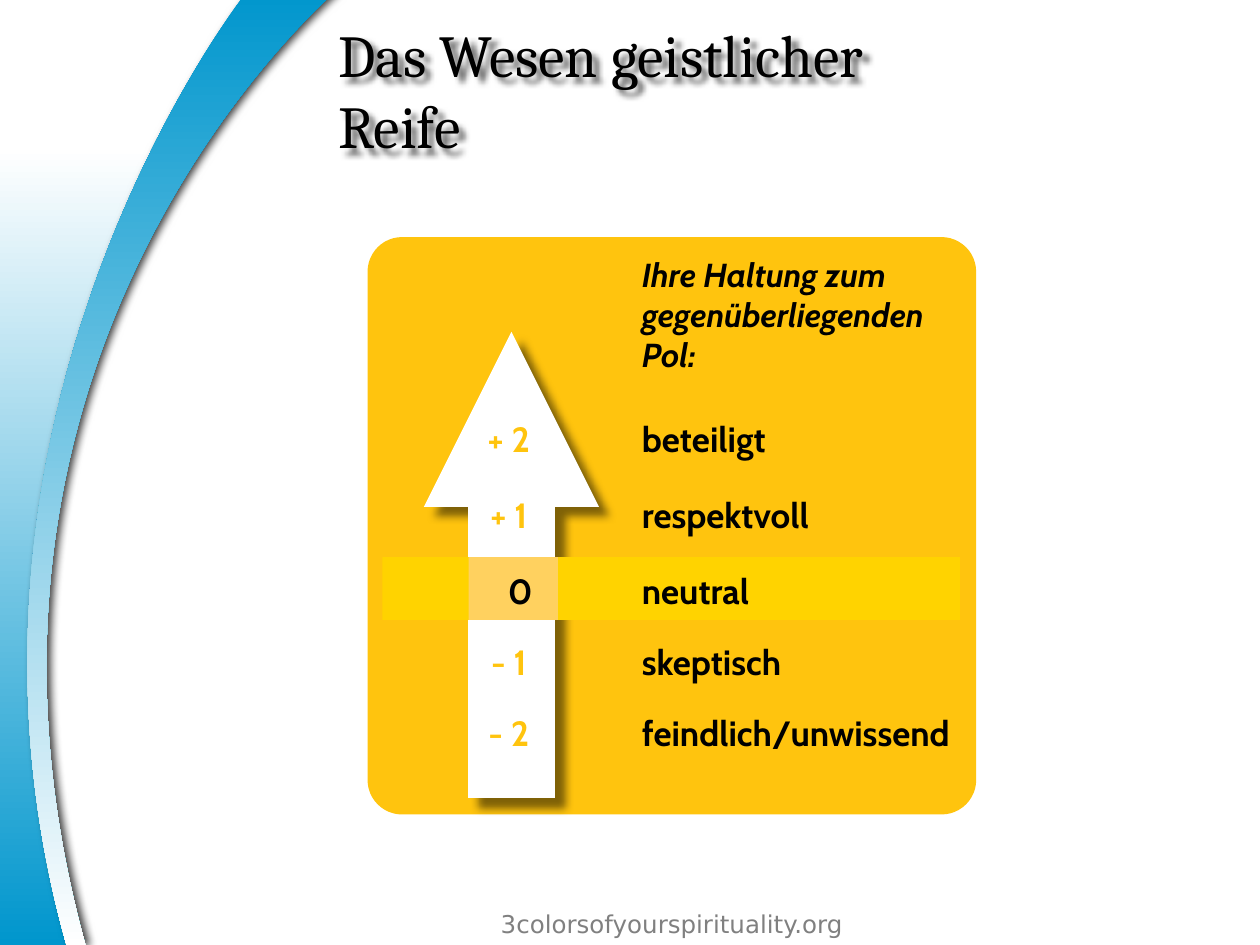
"""Build a slide on the nature of spiritual maturity."""
import lxml.etree
import pptx
import pptx.dml.color
import pptx.enum.shapes
import pptx.enum.text
import pptx.oxml.ns
import pptx.util

Cm, Pt = pptx.util.Cm, pptx.util.Pt
SHAPE = pptx.enum.shapes.MSO_SHAPE
ALIGN = pptx.enum.text.PP_ALIGN
FIT = pptx.enum.text.MSO_AUTO_SIZE
GOLD, BLUE, WHITE, BLACK = "FFC40E", "0096CD", "FFFFFF", "000000"
ROWS = [
    ("+ 2", "beteiligt", 3.52),
    ("+ 1", "respektvoll", 5.05),
    ("0", "neutral", 6.57),
    ("- 1", "skeptisch", 8),
    ("- 2", "feindlich/unwissend", 9.44),
]


def tint(code):
    """Turn a hex string into a colour."""
    return pptx.dml.color.RGBColor.from_string(code)


def name(tag):
    """Give the full name of a drawing element."""
    return pptx.oxml.ns.qn("a:" + tag)


def node(home, tag, **attrs):
    """Add a drawing element to its parent."""
    texts = {key: str(val) for key, val in attrs.items()}
    return lxml.etree.SubElement(home, name(tag), texts)


def shade(home, alpha, blur, dist, angle):
    """Add a black outer shadow, with blur and distance in points."""
    outer = node(node(home, "effectLst"), "outerShdw", blurRad=Pt(blur),
                 dist=Pt(dist), dir=angle * 60000, algn="ctr", rotWithShape=0)
    node(node(outer, "srgbClr", val=BLACK), "alpha", val=alpha * 1000)


def write(frame, text, size=20, face="Cabin", color=BLACK, bold=True,
          slant=False, align=ALIGN.LEFT, fit=FIT.SHAPE_TO_FIT_TEXT):
    """Fill a text frame and format its text."""
    frame.word_wrap, frame.auto_size = True, fit
    line = frame.paragraphs[0]
    line.text, line.alignment = text, align
    for run in line.runs:
        font = run.font
        font.size, font.name, font.bold, font.italic = Pt(size), face, bold, slant
        font.color.rgb = tint(color)


def label(slide, left, top, width, height, text, **style):
    """Add a text box, measured in centimetres."""
    box = slide.shapes.add_textbox(Cm(left), Cm(top), Cm(width), Cm(height))
    write(box.text_frame, text, **style)


def block(home, kind, left, top, width, height, color):
    """Add a plain filled shape, measured in centimetres."""
    shape = home.add_shape(kind, Cm(left), Cm(top), Cm(width), Cm(height))
    shape.shadow.inherit = False
    shape.fill.solid()
    shape.fill.fore_color.rgb = tint(color)
    shape.line.fill.background()
    return shape


def sweep(slide, left, top, start, parts, first, last):
    """Draw an outline of lines (one point) and curves (three points)."""
    spots = [(Cm(left + x), Cm(top + y)) for part in parts for x, y in part]
    pen = slide.shapes.build_freeform(Cm(left + start[0]), Cm(top + start[1]))
    pen.add_line_segments(spots, close=True)
    shape = pen.convert_to_shape()
    lines = iter(list(shape.element.iter(name("lnTo"))))
    for part in parts:
        group = [next(lines) for _ in part]
        if len(group) == 3:
            curve = lxml.etree.Element(name("cubicBezTo"))
            group[0].addprevious(curve)
            for line in group:
                curve.append(line[0])
                line.getparent().remove(line)
    shape.line.fill.background()
    shape.fill.gradient()
    shape.fill.gradient_angle = 270
    for stop, code in zip(shape.fill.gradient_stops, (first, last)):
        stop.color.rgb = tint(code)
    return shape


def side(slide, left, top):
    """Draw the curved edge on the left of the slide."""
    glow = [[(3.84, 2.97)],
            [(-0.89, 10.97), (1.27, 17.5), (1.65, 19.05)],
            [(0, 19.05)],
            [(-0.28, 16.36), (0, 2.97), (0, 2.97)]]
    pale = sweep(slide, left, top, (0, 2.97), glow, WHITE, BLUE)
    pale.shadow.inherit = False
    arc = [[(1.73, 19.08)],
           [(-1.63, 6.93), (6.78, -0.18), (6.78, -0.18)],
           [(5, -0.2)],
           [(5, -0.2), (-1.7, 8.28), (1.35, 19.08)]]
    band = sweep(slide, left, top, (1.35, 19.08), arc, BLUE, WHITE)
    shade(band.element.spPr, 75, 5, 3, 0)


def head(slide, left, top, width, height):
    """Place the title with its shadow."""
    title = slide.shapes.title
    title.left, title.top = Cm(left), Cm(top)
    title.width, title.height = Cm(width), Cm(height)
    title.fill.background()
    shade(title.element.spPr, 60, 3, 4, 45)
    frame = title.text_frame
    frame.vertical_anchor = pptx.enum.text.MSO_ANCHOR.MIDDLE
    write(frame, "Das Wesen geistlicher\vReife", size=34, face="Cambria",
          bold=False, fit=FIT.NONE)


def arrow(slide, x, low, high):
    """Draw the thick white arrow pointing up."""
    kind = pptx.enum.shapes.MSO_CONNECTOR.STRAIGHT
    line = slide.shapes.add_connector(kind, Cm(x), Cm(low), Cm(x), Cm(high))
    line.line.width = Pt(50)
    line.line.color.rgb = tint(WHITE)
    props = line.element.spPr
    node(props.find(name("ln")), "tailEnd", type="triangle", w="sm", len="sm")
    shade(props, 50, 5, 8, 45)


def panel(slide, left, top, width, height):
    """Draw the golden panel with its scale of attitudes."""
    card = block(slide.shapes, SHAPE.ROUNDED_RECTANGLE, left, top, width, height, GOLD)
    card.adjustments[0] = 0.06
    arrow(slide, left + 2.9, top + 11.31, top + 1.91)
    bar = slide.shapes.add_group_shape().shapes
    for start, wide, color in ((0.3, 11.64, "FFD300"), (2.04, 1.8, "FFD15F")):
        block(bar, SHAPE.RECTANGLE, left + start, top + 6.45, wide, 1.27, color)
    label(slide, left + 5.28, top + 0.22, 6.78, 2.69,
          "Ihre Haltung zum gegenüberliegenden Pol:", size=19, slant=True)
    for mark, view, drop in ROWS:
        zero = mark == "0"
        label(slide, left + 5.28, top + drop, 7.2, 1.1, view)
        label(slide, left + (2.13 if zero else 1.9), top + drop, 1.9, 1.1, mark,
              color=BLACK if zero else GOLD, align=ALIGN.CENTER)


def main():
    """Build and save the slide."""
    deck = pptx.Presentation()
    deck.slide_width, deck.slide_height = Cm(25.4), Cm(19.05)
    slide = deck.slides.add_slide(deck.slide_layouts[0])
    spare = slide.placeholders[1].element
    spare.getparent().remove(spare)
    side(slide, 0, 0)
    head(slide, 6.57, 0.21, 18.83, 3.18)
    panel(slide, 7.41, 4.78, 12.27, 11.64)
    label(slide, 9.52, 18.2, 8.05, 0.85, "3colorsofyourspirituality.org", size=14,
          face="DejaVu Sans", color="808080", bold=False, align=ALIGN.CENTER,
          fit=FIT.NONE)
    deck.save("out.pptx")


if __name__ == "__main__":
    main()
